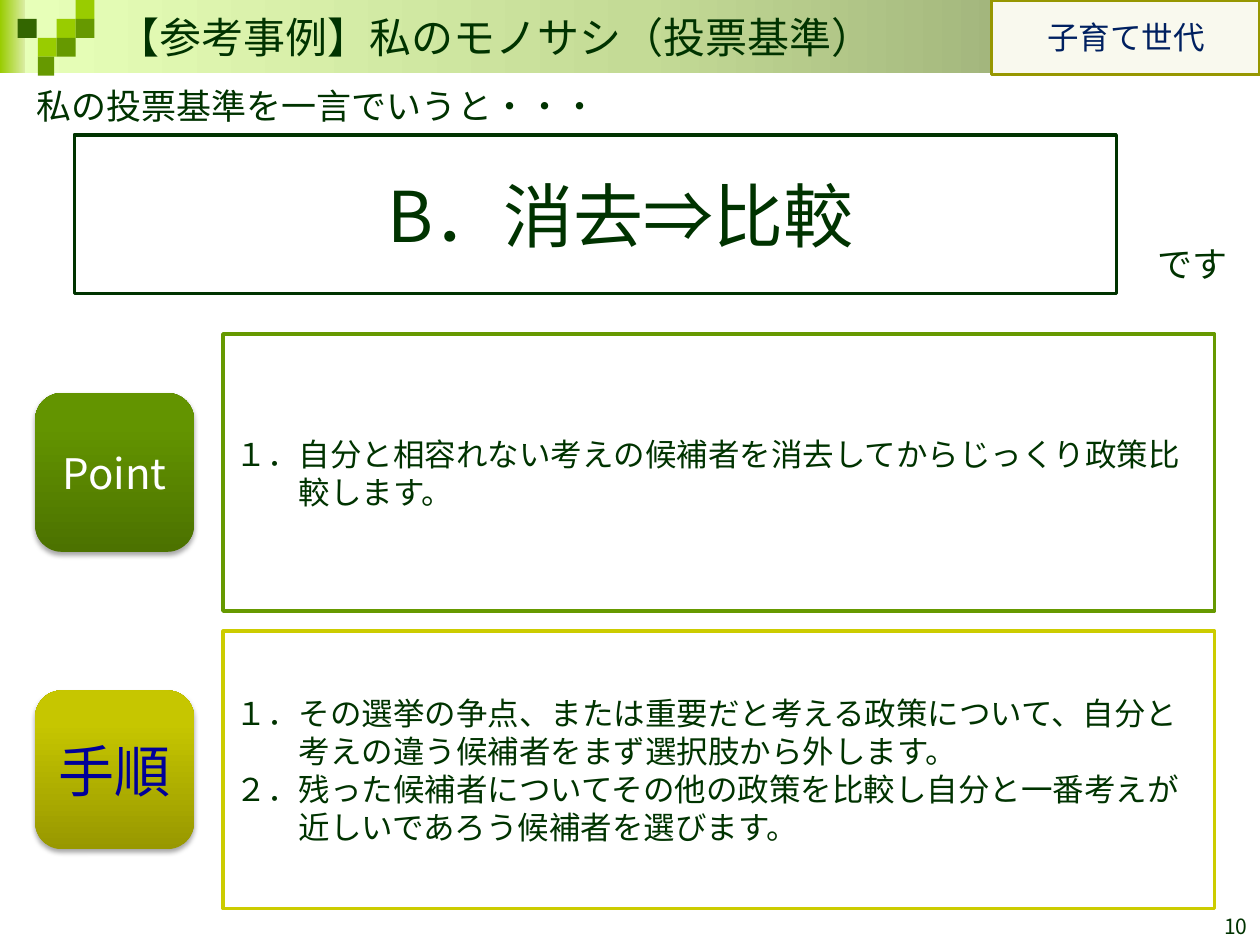
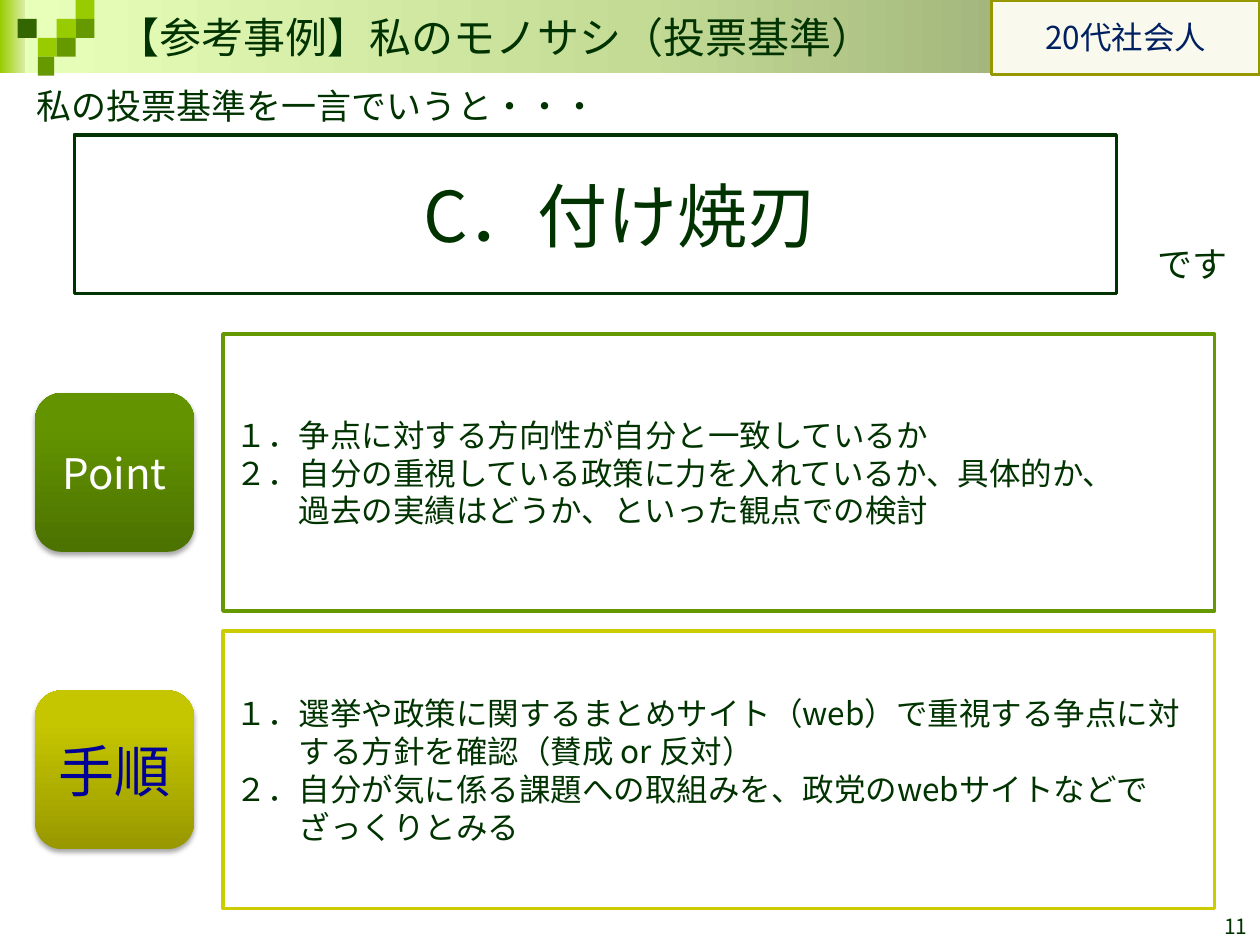
from lxml.etree import SubElement
from pptx import Presentation
from pptx.dml.color import RGBColor
from pptx.enum.shapes import MSO_SHAPE
from pptx.enum.text import MSO_ANCHOR, MSO_AUTO_SIZE, PP_ALIGN
from pptx.oxml.ns import qn
from pptx.util import Inches, Pt

FONT = "Noto Sans CJK JP"
INK = "003300"
WHITE = "FFFFFF"
LIME, GREEN, FOREST = "99CC00", "669900", "336600"
TITLE = "【参考事例】私のモノサシ（投票基準）"

# Header mosaic: left, top, width, colour
TILE = 0.15
MOSAIC = [
    (0.45, 0.15, TILE, LIME),
    (0.6, 0, TILE, LIME),
    (0.6, 0.15, TILE, GREEN),
    (0.3, 0.3, TILE, LIME),
    (0.14, 0.15, TILE, FOREST),
    (0.45, 0.3, TILE, GREEN),
    (0.3, 0.45, 0.13, GREEN),
]

# Panel rows: top, border, label, label size, label colour, label gradient
PANEL_HEIGHT = 2.2
LABEL_SIZE = 1.26
PANELS = [
    (2.65, GREEN, "Point", 24, WHITE,
     [(0, "4C7200"), (80, "639400"), (100, "639500")]),
    (5.01, "CCCC00", "手順", 32, "000099",
     [(0, "989800"), (80, "C6C600"), (100, "C7C700")]),
]

# "\v" is a line break inside a numbered item
SLIDES = [
    {
        "number": "10",
        "voter": "子育て世代",
        "answer": "B．消去⇒比較",
        "lists": [
            ["１．自分と相容れない考えの候補者を消去してからじっくり政策比\v較します。"],
            ["１．その選挙の争点、または重要だと考える政策について、自分と"
             "\v考えの違う候補者をまず選択肢から外します。",
             "２．残った候補者についてその他の政策を比較し自分と一番考えが"
             "\v近しいであろう候補者を選びます。"],
        ],
    },
    {
        "number": "11",
        "voter": "20代社会人",
        "answer": "C．付け焼刃",
        "lists": [
            ["１．争点に対する方向性が自分と一致しているか",
             "２．自分の重視している政策に力を入れているか、具体的か、"
             "\v過去の実績はどうか、といった観点での検討"],
            ["１．選挙や政策に関するまとめサイト（web）で重視する争点に対"
             "\vする方針を確認（賛成 or 反対）",
             "２．自分が気に係る課題への取組みを、政党のwebサイトなどで"
             "\vざっくりとみる"],
        ],
    },
]


def color(value):
    """Turn a hex string into a colour."""
    return RGBColor.from_string(value)


def place(shape, left, top, width, height):
    """Position a shape; lengths are in inches."""
    shape.left, shape.top = Inches(left), Inches(top)
    shape.width, shape.height = Inches(width), Inches(height)


def paint(shape, fill, border=None):
    """Give a shape a solid fill and an optional 2 pt border."""
    shape.fill.solid()
    shape.fill.fore_color.rgb = color(fill)
    if border:
        shape.line.color.rgb = color(border)
        shape.line.width = Pt(2)
    else:
        shape.line.fill.background()


def paint_gradient(shape, stops, angle):
    """Fill a shape with (percent, colour) stops; angle is counter-clockwise."""
    shape.line.fill.background()
    shape.fill.gradient()
    shape.fill.gradient_angle = angle
    stop_list = shape.element.spPr.find(qn("a:gradFill")).find(qn("a:gsLst"))
    for stop in list(stop_list):
        stop_list.remove(stop)
    for percent, value in stops:
        stop = SubElement(stop_list, qn("a:gs"), pos=str(percent * 1000))
        SubElement(stop, qn("a:srgbClr"), val=value)


def add_shadow(shape):
    """Add a soft shadow below a shape."""
    effects = shape.element.spPr.find(qn("a:effectLst"))
    shadow = SubElement(effects, qn("a:outerShdw"), blurRad=str(Pt(3.1)),
                        dist=str(Pt(1.8)), dir="5400000", rotWithShape="0")
    black = SubElement(shadow, qn("a:srgbClr"), val="000000")
    SubElement(black, qn("a:alpha"), val="35000")


def write(shape, lines, size, ink=INK, align=PP_ALIGN.LEFT, margin=0, indent=0,
          anchor=MSO_ANCHOR.MIDDLE, font=FONT):
    """Write one paragraph per line with a shared format."""
    frame = shape.text_frame
    frame.word_wrap = True
    frame.auto_size = MSO_AUTO_SIZE.NONE
    frame.vertical_anchor = anchor
    frame.text = "\n".join(lines)
    for paragraph in frame.paragraphs:
        properties = paragraph._p.get_or_add_pPr()
        properties.set("marL", str(Inches(margin)))
        properties.set("indent", str(Inches(indent)))
        SubElement(properties, qn("a:buNone"))
        paragraph.alignment = align
        paragraph.space_before = Pt(0)
        paragraph.font.size = Pt(size)
        paragraph.font.color.rgb = color(ink)
        paragraph.font.name = font
        SubElement(properties.find(qn("a:defRPr")), qn("a:ea"), typeface=FONT)


def add_box(slide, left, top, width, height, kind=MSO_SHAPE.RECTANGLE):
    """Add a preset shape without the theme shadow."""
    shape = slide.shapes.add_shape(
        kind, Inches(left), Inches(top), Inches(width), Inches(height))
    shape.shadow.inherit = False
    return shape


def add_text(slide, left, top, width, height, text, size, **style):
    """Add a text box with one line."""
    box = slide.shapes.add_textbox(
        Inches(left), Inches(top), Inches(width), Inches(height))
    write(box, [text], size, **style)


def add_header(slide, voter):
    """Draw the band and mosaic, then the title and the voter tag on top."""
    paint_gradient(add_box(slide, 0, 0, 0.31, 0.58), [(0, LIME), (100, WHITE)], 0)
    paint_gradient(add_box(slide, 0.2, 0, 9.8, 0.58),
                   [(0, "8A9A6A"), (50, "C4DB96"), (100, "E7FFB8")], 180)
    for left, top, width, fill in MOSAIC:
        paint(add_box(slide, left, top, width, TILE), fill)

    tag = add_box(slide, 7.87, 0, 2.13, 0.59)
    paint(tag, "F9F9EE", "979700")
    write(tag, [voter], 18, ink="002060", align=PP_ALIGN.CENTER)

    title = slide.shapes.title
    place(title, 0.83, 0.04, 8.66, 0.5)
    write(title, [TITLE], 24, font="Arial")
    slide.shapes.element.append(title.element)


def add_answer(slide, answer):
    """Add the framed answer with its lead-in and closing words."""
    add_text(slide, 0, 0.6, 7.28, 0.47, "私の投票基準を一言でいうと・・・", 20, indent=0.19)
    frame = add_box(slide, 0.59, 1.07, 8.27, 1.26)
    paint(frame, WHITE, INK)
    write(frame, [answer], 40, align=PP_ALIGN.CENTER, indent=0.4)
    add_text(slide, 8.9, 1.86, 0.98, 0.47, "です", 20, indent=0.19)


def add_panel(slide, body, items, row):
    """Format a list placeholder as a panel and put its label beside it."""
    top, border, label, size, ink, stops = row
    place(body, 1.77, top, 7.87, PANEL_HEIGHT)
    paint(body, WHITE, border)
    write(body, items, 18, margin=0.5, indent=-0.5)

    label_top = top + (PANEL_HEIGHT - LABEL_SIZE) / 2
    badge = add_box(slide, 0.28, label_top, LABEL_SIZE, LABEL_SIZE,
                    MSO_SHAPE.ROUNDED_RECTANGLE)
    paint_gradient(badge, stops, 90)
    add_shadow(badge)
    write(badge, [label], size, ink=ink, align=PP_ALIGN.CENTER)


def add_case(presentation, case):
    """Build the slide for one voter."""
    slide = presentation.slides.add_slide(presentation.slide_layouts[3])
    add_header(slide, case["voter"])
    add_answer(slide, case["answer"])
    bodies = [slide.placeholders[1], slide.placeholders[2]]
    for body, items, row in zip(bodies, case["lists"], PANELS):
        add_panel(slide, body, items, row)
    add_text(slide, 7.67, 7, 2.33, 0.5, case["number"], 12,
             align=PP_ALIGN.RIGHT, anchor=MSO_ANCHOR.BOTTOM)


def main():
    """Build and save the presentation."""
    presentation = Presentation()
    presentation.slide_width = Inches(10)
    presentation.slide_height = Inches(7.5)
    for case in SLIDES:
        add_case(presentation, case)
    presentation.save("out.pptx")


main()
